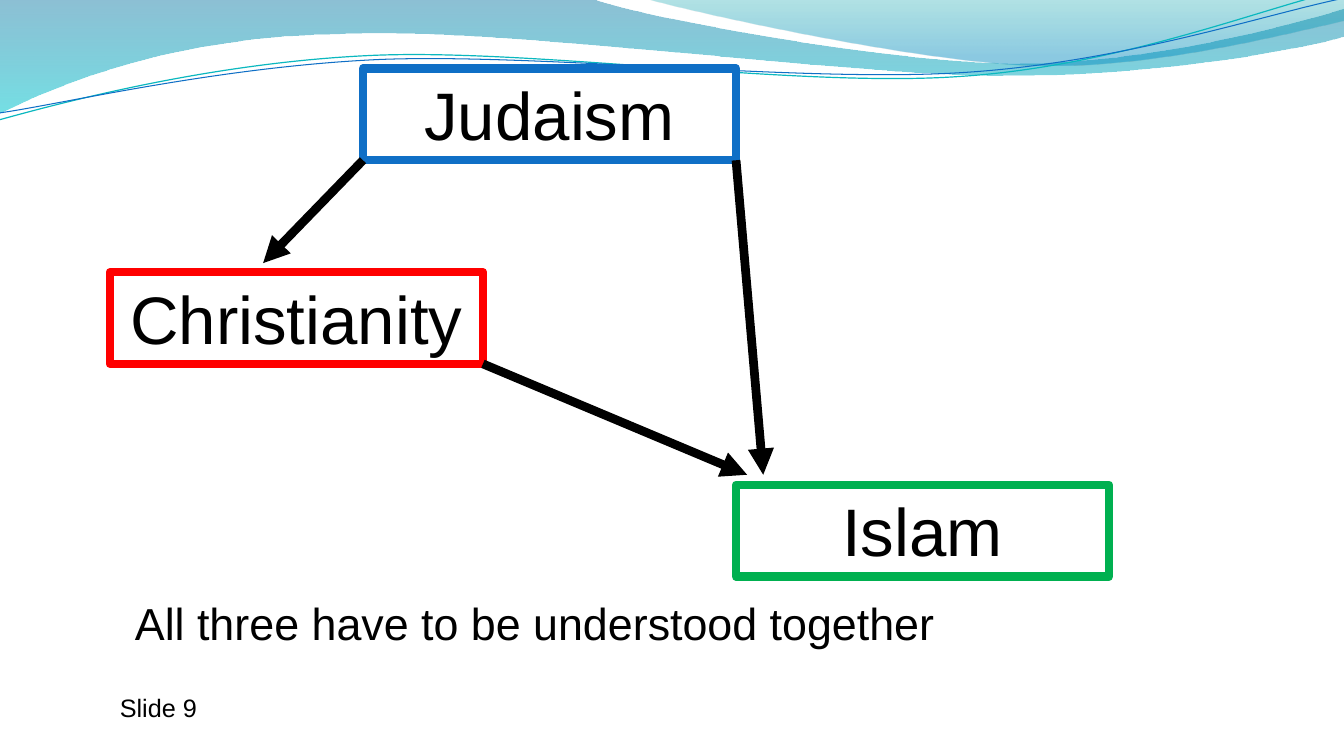
from dataclasses import dataclass
from math import cos, radians, sin

from lxml import etree
from pptx import Presentation
from pptx.dml.color import RGBColor
from pptx.enum.shapes import MSO_CONNECTOR, MSO_SHAPE
from pptx.enum.text import MSO_ANCHOR, MSO_AUTO_SIZE, PP_ALIGN
from pptx.oxml.ns import qn
from pptx.util import Inches, Pt

RECTANGLE = MSO_SHAPE.RECTANGLE
STRAIGHT = MSO_CONNECTOR.STRAIGHT
TOP = MSO_ANCHOR.TOP
GROW = MSO_AUTO_SIZE.SHAPE_TO_FIT_TEXT
LEFT = PP_ALIGN.LEFT
CENTER = PP_ALIGN.CENTER

BLACK = RGBColor(0x00, 0x00, 0x00)
BLUE = RGBColor(0x0F, 0x6F, 0xC6)
GREEN = RGBColor(0x00, 0xB0, 0x50)
RED = RGBColor(0xFF, 0x00, 0x00)
TEAL = RGBColor(0x0A, 0xB8, 0xBF)
DEEP_BLUE = RGBColor(0x00, 0x74, 0xA1)
CYAN = RGBColor(0x00, 0xC6, 0xCF)
DARK_TEAL = RGBColor(0x00, 0xA1, 0xA9)
SKY_BLUE = RGBColor(0x00, 0x8B, 0xBF)

BOX_WIDTH, BOX_HEIGHT = 3.7, 0.91
LINE_TILT = 357.3

Point = tuple[float, float]


@dataclass(frozen=True)
class Stop:
    position: float
    color: RGBColor
    opacity: int


@dataclass(frozen=True)
class Wave:
    start: Point
    segments: list[tuple[float, ...]]
    stops: tuple[Stop, ...] = ()
    color: RGBColor = BLACK
    weight: float = 0
    pivot: Point = (0, 0)
    rotation: float = 0

    def points(self) -> list[Point]:
        flat = [value for segment in self.segments for value in segment]
        angle = radians(-self.rotation)
        pivot_x, pivot_y = self.pivot
        return [(pivot_x + (x - pivot_x) * cos(angle) - (y - pivot_y) * sin(angle),
                 pivot_y + (x - pivot_x) * sin(angle) + (y - pivot_y) * cos(angle))
                for x, y in [self.start, *zip(flat[::2], flat[1::2])]]


@dataclass(frozen=True)
class Religion:
    name: str
    left: float
    top: float
    color: RGBColor

    def bottom_corner(self, right: bool) -> Point:
        return self.left + BOX_WIDTH * right, self.top + BOX_HEIGHT


@dataclass(frozen=True)
class Arrow:
    start: Point
    end: Point


@dataclass(frozen=True)
class Caption:
    text: str
    left: float
    top: float
    width: float
    height: float
    size: int


WAVES = [
    Wave((0, 0),
         [(5.87, -0.01),
          (6.34, 0.17, 8.85, 0.63, 10.11, 0.63),
          (11.38, 0.63, 12.78, 0.26, 13.33, 0.09),
          (13.35, 0.36),
          (13.11, 0.44, 11.6, 0.76, 9.94, 0.75),
          (8.29, 0.75, 5.09, 0.28, 3.43, 0.34),
          (1.72, 0.36, 0.61, 0.83, -0.01, 1.13)],
         stops=(Stop(0, DEEP_BLUE, 45), Stop(1, CYAN, 55))),
    Wave((6.39, -0.01),
         [(6.79, 0.11, 9.09, 0.62, 10.25, 0.65),
          (11.41, 0.69, 12.82, 0.32, 13.33, 0.21),
          (13.33, 0)],
         stops=(Stop(0, DARK_TEAL, 30), Stop(0.8, SKY_BLUE, 45))),
    Wave((-0.01, 1.19),
         [(0.64, 1.01, 2.11, 0.62, 3.69, 0.55),
          (5.27, 0.48, 7.9, 0.87, 9.5, 0.76),
          (11.1, 0.66, 12.52, 0.08, 13.31, -0.1)],
         color=TEAL, weight=0.85, pivot=(6.65, 0.57), rotation=LINE_TILT),
    Wave((0, 1.12),
         [(0.63, 1.03, 2.18, 0.66, 3.78, 0.59),
          (5.37, 0.53, 7.96, 0.82, 9.55, 0.72),
          (11.15, 0.62, 12.55, 0.14, 13.34, -0.02)],
         color=BLUE, weight=0.75, pivot=(6.67, 0.59), rotation=LINE_TILT),
]

JUDAISM = Religion("Judaism", 3.6, 0.68, BLUE)
ISLAM = Religion("Islam", 7.3, 4.81, GREEN)
CHRISTIANITY = Religion("Christianity", 1.09, 2.7, RED)

ARROWS = [
    Arrow(JUDAISM.bottom_corner(right=False), (2.61, 2.61)),
    Arrow(JUDAISM.bottom_corner(right=True), (7.57, 4.71)),
    Arrow(CHRISTIANITY.bottom_corner(right=True), (7.41, 4.71)),
]

CAPTIONS = [
    Caption("All three have to be understood together", 1.24, 5.86, 11.1, 0.64, 32),
    Caption("Slide 9", 1.09, 6.82, 1.18, 0.4, 18),
]


def bend_segments(shape, wave: Wave) -> None:
    lines = iter(list(shape._element.iter(qn("a:lnTo"))))
    for segment in wave.segments:
        first = next(lines)
        if len(segment) == 2:
            continue
        curve = etree.Element(qn("a:cubicBezTo"))
        first.addprevious(curve)
        for line in (first, next(lines), next(lines)):
            curve.append(line[0])
            line.getparent().remove(line)


def draw_wave(page, wave: Wave) -> None:
    points = [(Inches(x), Inches(y)) for x, y in wave.points()]
    builder = page.shapes.build_freeform(*points[0])
    builder.add_line_segments(points[1:], close=bool(wave.stops))
    shape = builder.convert_to_shape()
    bend_segments(shape, wave)
    shape.shadow.inherit = False
    shape.rotation = wave.rotation
    if not wave.stops:
        shape.fill.background()
        shape.line.color.rgb = wave.color
        shape.line.width = Pt(wave.weight)
        return
    shape.line.fill.background()
    shape.fill.gradient()
    shape.fill.gradient_angle = 270
    for target, stop in zip(shape.fill.gradient_stops, wave.stops):
        target.color.rgb = stop.color
        target.position = stop.position
    for color, stop in zip(shape._element.iter(qn("a:srgbClr")), wave.stops):
        etree.SubElement(color, qn("a:alpha"), val=str(stop.opacity * 1000))


def write_text(shape, text: str, size: int, alignment: PP_ALIGN) -> None:
    frame = shape.text_frame
    para = frame.paragraphs[0]
    span = para.add_run()
    span.text = text
    formats = {
        frame: {"word_wrap": True, "vertical_anchor": TOP, "auto_size": GROW},
        para: {"alignment": alignment},
        span.font: {"name": "Arial", "size": Pt(size)},
    }
    for target, values in formats.items():
        for name, value in values.items():
            setattr(target, name, value)
    span.font.color.rgb = BLACK


def draw_religion(page, religion: Religion) -> None:
    box = page.shapes.add_shape(RECTANGLE, Inches(religion.left), Inches(religion.top),
                                Inches(BOX_WIDTH), Inches(BOX_HEIGHT))
    box.shadow.inherit = False
    box.fill.background()
    box.line.color.rgb = religion.color
    box.line.width = Pt(6)
    etree.SubElement(box.line._get_or_add_ln(), qn("a:round"))
    write_text(box, religion.name, 48, CENTER)


def draw_caption(page, caption: Caption) -> None:
    box = page.shapes.add_textbox(Inches(caption.left), Inches(caption.top),
                                  Inches(caption.width), Inches(caption.height))
    write_text(box, caption.text, caption.size, LEFT)


def draw_arrow(page, arrow: Arrow) -> None:
    ends = [Inches(value) for value in arrow.start + arrow.end]
    connector = page.shapes.add_connector(STRAIGHT, *ends)
    connector.line.color.rgb = BLACK
    connector.line.width = Pt(6.25)
    etree.SubElement(connector.line._get_or_add_ln(), qn("a:tailEnd"), type="triangle")
    etree.SubElement(connector._element.spPr, qn("a:effectLst"))


def main() -> None:
    deck = Presentation()
    deck.slide_width, deck.slide_height = Inches(13.33), Inches(7.5)
    page = deck.slides.add_slide(deck.slide_layouts[6])
    for wave in WAVES:
        draw_wave(page, wave)
    for religion in (JUDAISM, ISLAM, CHRISTIANITY):
        draw_religion(page, religion)
    for caption in CAPTIONS:
        draw_caption(page, caption)
    for arrow in ARROWS:
        draw_arrow(page, arrow)
    deck.save("out.pptx")


if __name__ == "__main__":
    main()
